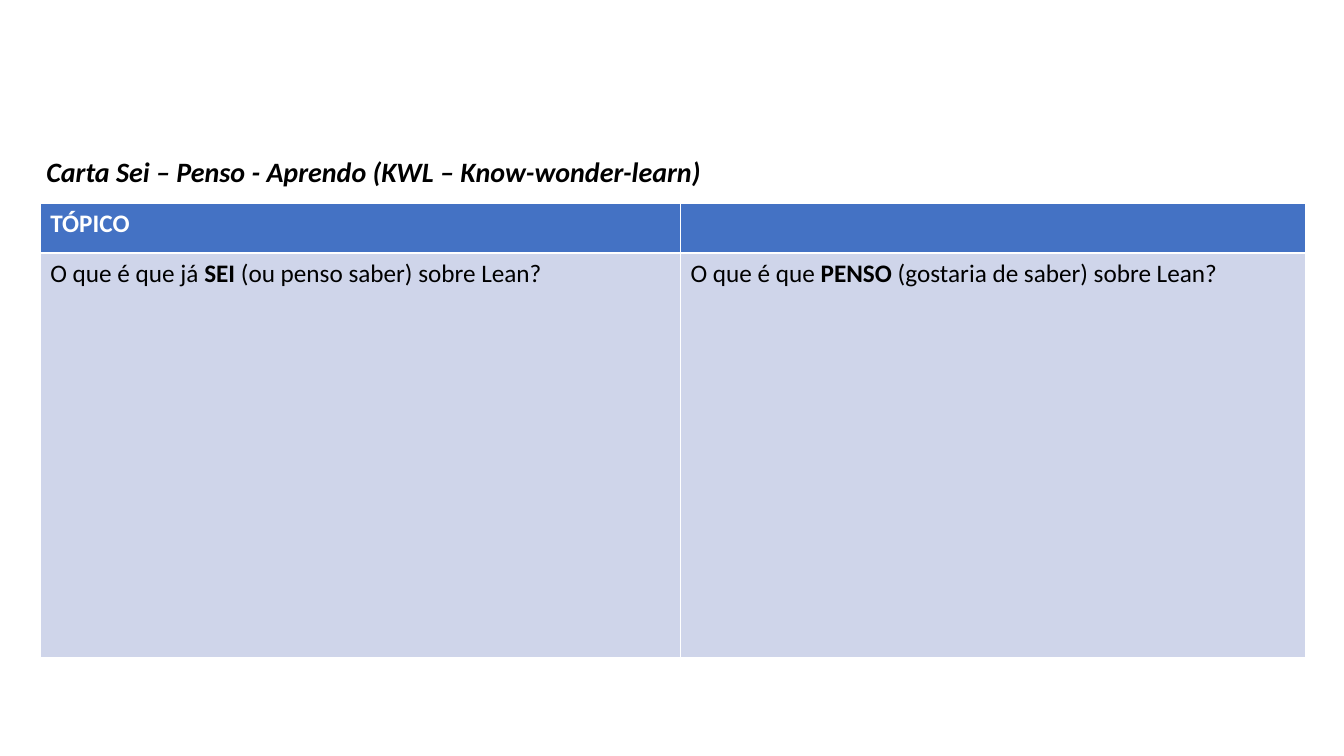
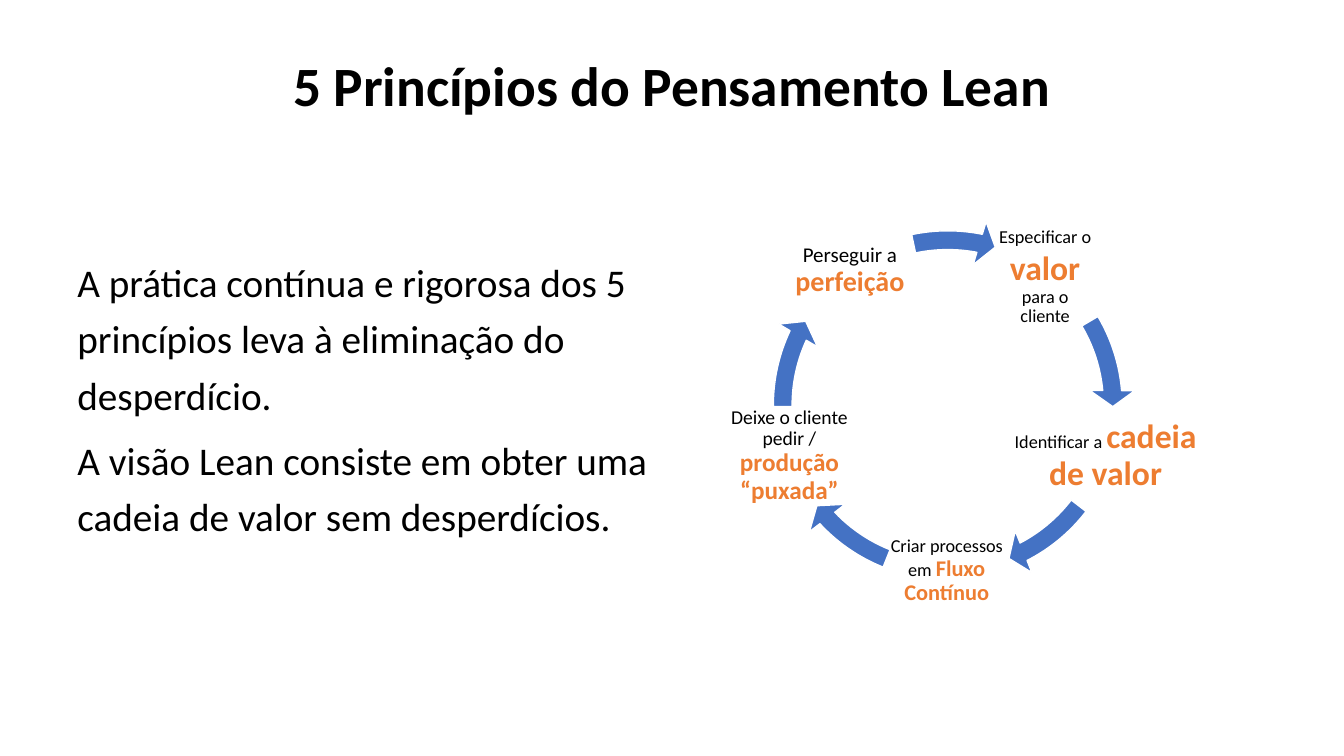
"""Two slides on Lean: a know-wonder-learn chart and the five principles."""
from pptx import Presentation
from pptx import util as u
from pptx.dml.color import RGBColor as Rgb
from pptx.enum import shapes, text


class Theme:
    font = "Calibri"
    ink = Rgb.from_string("000000")
    white = Rgb.from_string("FFFFFF")
    blue = Rgb.from_string("4472C4")
    pale = Rgb.from_string("CFD5EA")
    accent = Rgb.from_string("ED7D31")
    head, body, label, cell = 39.6, 28, 20, 18


def style(para, size=None, color=None, bold=None, italic=None):
    font = para.font
    font.name = Theme.font
    font.size = u.Pt(size) if size else None
    if color is not None:
        font.color.rgb = color
    font.bold, font.italic = bold, italic


def start(title, box, size, italic, align):
    slide = deck.slides.add_slide(deck.slide_layouts[5])
    head = slide.shapes.title
    head.left, head.top, head.width, head.height = map(u.Inches, box)
    frame = head.text_frame
    frame.text = title
    frame.auto_size = text.MSO_AUTO_SIZE.NONE
    frame.vertical_anchor = text.MSO_ANCHOR.TOP
    para = frame.paragraphs[0]
    para.alignment = align
    style(para, size, Theme.ink, True, italic)
    return slide


deck = Presentation()
deck.slide_width, deck.slide_height = u.Inches(13.33), u.Inches(7.5)

slide = start("Carta Sei – Penso - Aprendo (KWL – Know-wonder-learn)",
              (0.36, 1.48, 6.98, 0.44), Theme.label, True, text.PP_ALIGN.LEFT)
table = slide.shapes.add_table(2, 2, u.Inches(0.4), u.Inches(2.02),
                               u.Inches(12.55), u.Inches(4.5)).table
table.horz_banding = False
for col, width in zip(table.columns, (6.35, 6.2)):
    col.width = u.Inches(width)
for row, height in zip(table.rows, (0.49, 4.01)):
    row.height = u.Inches(height)
rows = [
    (Theme.blue, Theme.white, [[("TÓPICO", True)], []]),
    (Theme.pale, Theme.ink, [
        [("O que é que já ", False), ("SEI", True),
         (" (ou penso saber) sobre Lean?", False)],
        [("O que é que ", False), ("PENSO", True),
         (" (gostaria de saber) sobre Lean?", False)],
    ]),
]
for r, (fill, color, cells) in enumerate(rows):
    for c, parts in enumerate(cells):
        cell = table.cell(r, c)
        cell.fill.solid()
        cell.fill.fore_color.rgb = fill
        para = cell.text_frame.paragraphs[0]
        style(para, Theme.cell, color)
        for words, bold in parts:
            run = para.add_run()
            run.text = words
            run.font.bold = bold

slide = start("5 Princípios do Pensamento Lean", (0, 0.58, 13.33, 0.68),
              Theme.head, False, text.PP_ALIGN.CENTER)
slide.shapes.title.text_frame.paragraphs[0].line_spacing = 0.8

frame = slide.shapes.add_textbox(*map(u.Inches, (0.67, 2.42, 6, 3.24))).text_frame
frame.word_wrap = True
frame.text = ("A prática contínua e rigorosa dos 5 princípios leva à eliminação do desperdício.\n"
              "A visão Lean consiste em obter uma cadeia de valor sem desperdícios.")
for i, para in enumerate(frame.paragraphs):
    para.line_spacing = 1.2
    para.space_before = u.Pt(6 if i else 0)
    style(para, Theme.body, Theme.ink)

steps = [
    ((9.87, 2.19, 0.99), 13, 24, ("Especificar o", " valor", " para o cliente"), (212.95, 197.65)),
    ((9.99, 4.03, 1.95), 13, 24, ("Identificar a ", "cadeia de valor"), (37.59, 22.52)),
    ((8.78, 5.17, 1.22), 13, 16, ("Criar processos em ", "Fluxo Contínuo"), (82.12, 67.05)),
    ((7.14, 4.03, 1.38), 14, 18, ("Deixe o cliente pedir / ", "produção “puxada”"), (122.99, 107.7)),
    ((7.8, 2.19, 1.26), 15, 20, ("Perseguir a ", "perfeição"), (168.67, 154.83)),
]
for (left, top, width), small, large, parts, (end, begin) in steps:
    frame = slide.shapes.add_textbox(*map(u.Inches, (left, top, width, 0.99))).text_frame
    frame.word_wrap = True
    frame.vertical_anchor = text.MSO_ANCHOR.MIDDLE
    frame.margin_left = frame.margin_right = u.Inches(0.02)
    frame.margin_top = frame.margin_bottom = u.Inches(0.02)
    para = frame.paragraphs[0]
    para.alignment = text.PP_ALIGN.CENTER
    para.line_spacing = 0.9
    style(para)
    for i, words in enumerate(parts):
        strong = i == 1
        run = para.add_run()
        run.text = words
        run.font.size = u.Pt(large if strong else small)
        run.font.bold = strong
        run.font.color.rgb = Theme.accent if strong else Theme.ink

    arrow = slide.shapes.add_shape(shapes.MSO_SHAPE.CIRCULAR_ARROW,
                                   *map(u.Inches, (7.54, 2.16, 3.72, 3.72)))
    arrow.shadow.inherit = False
    arrow.fill.solid()
    arrow.fill.fore_color.rgb = Theme.blue
    arrow.line.color.rgb = Theme.white
    arrow.line.width = u.Pt(1)
    for i, value in enumerate((0.05, 3.36, end, begin, 0.06)):
        arrow.adjustments[i] = value

deck.save("out.pptx")
